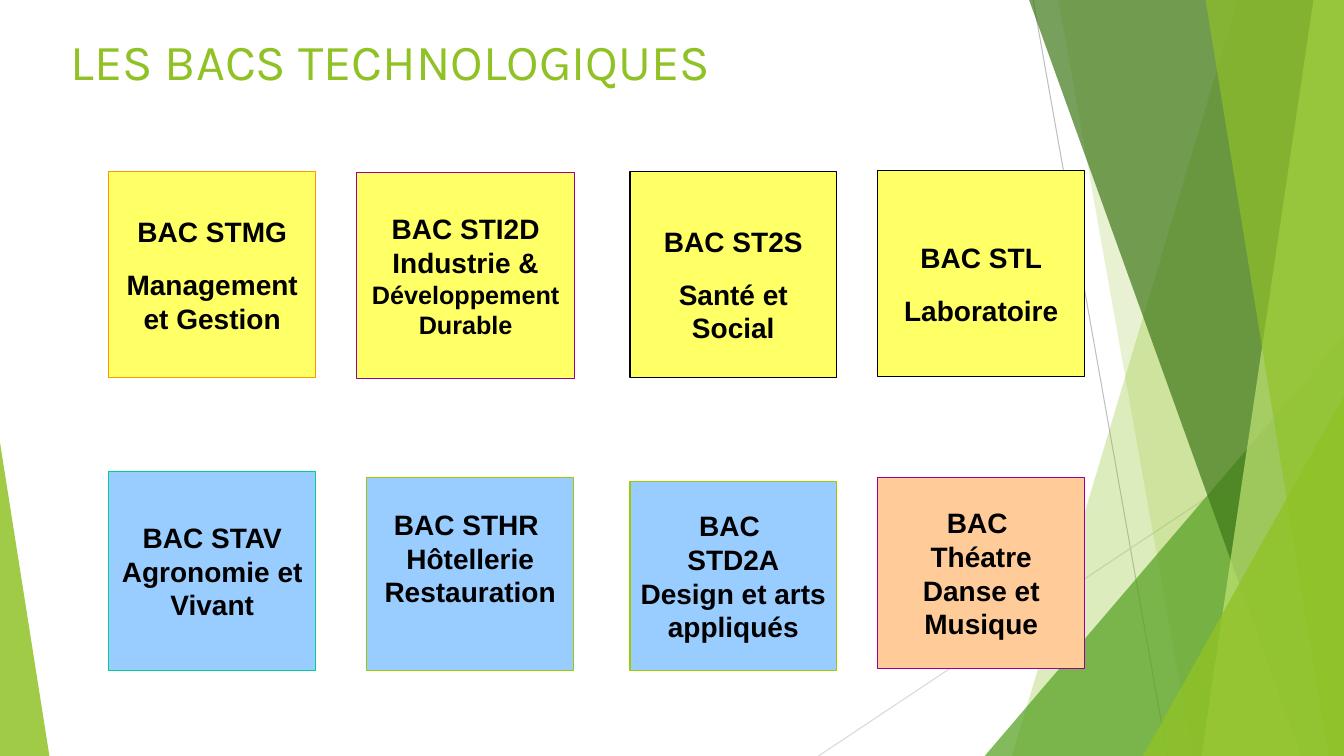
from dataclasses import dataclass

import pptx
import pptx.dml.color
import pptx.enum.shapes
import pptx.enum.text
import pptx.oxml
import pptx.oxml.ns
import pptx.util
from pptx.util import Pt

SHAPES = pptx.enum.shapes.MSO_SHAPE
ALIGN = pptx.enum.text.PP_ALIGN
ANCHOR = pptx.enum.text.MSO_ANCHOR


@dataclass(frozen=True)
class Theme:
    green: str = "90C226"
    mid_green: str = "54A021"
    dark_green: str = "3F7819"
    pale_green: str = "C0E474"
    black: str = "000000"
    yellow: str = "FFFF66"
    blue: str = "99CCFF"
    peach: str = "FFCC99"
    orange: str = "FF9900"
    purple: str = "990099"
    lime: str = "99CC00"
    teal: str = "00CC99"
    gray: str = "BFBFBF"
    light_gray: str = "D9D9D9"
    title_font: str = "Karla"
    body_font: str = "Arial"
    title_size: int = 36
    card_size: int = 20
    small_size: int = 18
    line_width: float = 0.75
    gap: float = 13.8


THEME = Theme()
CARD = 147.6

# left, top, width, height, fill, outline, paragraphs, space after the name,
# extra inset above, extra inset below
CARDS = [
    (77.8, 122.4, CARD, CARD, THEME.yellow, THEME.orange,
     ["BAC STMG", "Management et Gestion"], THEME.gap, 0, 0),
    (254.9, 123.1, 155.5, CARD, THEME.yellow, THEME.purple,
     ["BAC STI2D", ("Industrie & ", "Développement Durable")], 0, 0, 0),
    (450, 122.4, CARD, CARD, THEME.yellow, THEME.black,
     ["BAC ST2S", "Santé et Social"], THEME.gap, THEME.gap, 0),
    (627.1, 121.7, CARD, CARD, THEME.yellow, THEME.black,
     ["BAC STL", "Laboratoire"], THEME.gap, THEME.gap, 0),
    (77.8, 337, CARD, 141.8, THEME.blue, THEME.teal,
     ["BAC STAV", "Agronomie et Vivant"], 0, 0, 0),
    (262.1, 341.3, CARD, 137.5, THEME.blue, THEME.lime,
     ["BAC STHR ", "Hôtellerie", "Restauration"], 0, 0, 23),
    (450, 344.2, CARD, 134.6, THEME.blue, THEME.lime,
     ["BAC ", "STD2A", "Design et arts appliqués"], 0, 0, 0),
    (627.1, 341.3, CARD, 136.1, THEME.peach, THEME.purple,
     ["BAC ", "Théatre Danse et Musique"], 0, 0, 0),
]


def rgb(color):
    return pptx.dml.color.RGBColor.from_string(color)


def apply(target, formats):
    for name, value in formats.items():
        setattr(target, name, value)


def format_font(font, name, size, color, bold=False):
    apply(font, {"name": name, "size": Pt(size), "bold": bold})
    font.color.rgb = rgb(color)


def fill_shape(shape, color, opacity=100):
    """Give a flat fill; opacity is in percent."""
    shape.shadow.inherit = False
    shape.fill.solid()
    shape.fill.fore_color.rgb = rgb(color)
    if opacity < 100:
        color_element = shape._element.spPr.find(".//" + pptx.oxml.ns.qn("a:srgbClr"))
        alpha = pptx.oxml.ns.qn("a:alpha")
        color_element.makeelement(alpha, {})
        color_element.append(color_element.makeelement(alpha, {"val": str(opacity * 1000)}))


def add_decoration(slide, box):
    """Layer translucent facets along the right edge and one at the lower left."""
    left, top, width, height = box
    right, bottom = left + width, top + height

    def add_line(start, end, color):
        """Points are distances from the right edge and from the top."""
        line = slide.shapes.add_connector(
            pptx.enum.shapes.MSO_CONNECTOR.STRAIGHT,
            Pt(right - start[0]), Pt(top + start[1]), Pt(right - end[0]), Pt(top + end[1]))
        line.line.color.rgb = rgb(color)
        line.line.width = Pt(THEME.line_width)
        properties = line._element.spPr
        properties.append(properties.makeelement(pptx.oxml.ns.qn("a:effectLst"), {}))

    def add_facet(top_reach, bottom_reach, color, opacity):
        """Fill from the right edge out to a slanted side."""
        builder = slide.shapes.build_freeform(
            Pt(right - top_reach), Pt(top), scale=1.0)
        builder.add_line_segments([
            (Pt(right), Pt(top)), (Pt(right), Pt(bottom)),
            (Pt(right - bottom_reach), Pt(bottom))], close=True)
        facet = builder.convert_to_shape()
        fill_shape(facet, color, opacity)
        facet.line.fill.background()

    def add_corner(corner_left, corner_width, corner_height, apex, color, opacity):
        corner = slide.shapes.add_shape(
            SHAPES.ISOSCELES_TRIANGLE, Pt(corner_left), Pt(bottom - corner_height),
            Pt(corner_width), Pt(corner_height))
        corner.adjustments[0] = apex
        fill_shape(corner, color, opacity)
        corner.line.fill.background()

    add_line((222, 0), (126.2, height), THEME.gray)
    add_line((0, 290.2), (375.4, height), THEME.light_gray)
    add_facet(75.8, 237.1, THEME.green, 30)
    add_facet(204, 108.2, THEME.green, 20)
    add_corner(right - 256.6, 256.6, 300.2, 1, THEME.mid_green, 72)
    add_facet(224.9, 30.5, THEME.dark_green, 70)
    add_facet(21.8, 101.8, THEME.pale_green, 70)
    add_facet(98.9, 11, THEME.green, 65)
    add_corner(right - 143.5, 143.5, 257, 1, THEME.green, 80)
    add_corner(left, 35.3, 223.9, 0, THEME.green, 85)


def add_title(slide, box, text):
    title = slide.shapes.title
    apply(title, dict(zip(("left", "top", "width", "height"), map(Pt, box))))
    apply(title.text_frame, {
        "text": text, "word_wrap": True, "vertical_anchor": ANCHOR.TOP,
        "auto_size": pptx.enum.text.MSO_AUTO_SIZE.NONE})
    paragraph = title.text_frame.paragraphs[0]
    paragraph.alignment = ALIGN.LEFT
    format_font(paragraph.runs[0].font, THEME.title_font, THEME.title_size, THEME.green)


def add_card(slide, box, fill, outline, texts, name_gap, inset_above, inset_below):
    """Draw one course; a tuple of texts puts its second part in the small size."""
    card = slide.shapes.add_shape(SHAPES.RECTANGLE, *map(Pt, box))
    fill_shape(card, fill)
    card.line.color.rgb = rgb(outline)
    card.line.width = Pt(THEME.line_width)
    frame = card.text_frame
    apply(frame, {
        "word_wrap": True, "vertical_anchor": ANCHOR.MIDDLE,
        "margin_left": Pt(7.2), "margin_right": Pt(7.2),
        "margin_top": Pt(3.6 + inset_above), "margin_bottom": Pt(3.6 + inset_below)})
    for index, text in enumerate(texts):
        paragraph = frame.add_paragraph() if index else frame.paragraphs[0]
        apply(paragraph, {"alignment": ALIGN.CENTER,
                          "space_after": Pt(0 if index else name_gap)})
        parts = text if isinstance(text, tuple) else (text,)
        for part, size in zip(parts, (THEME.card_size, THEME.small_size)):
            run = paragraph.add_run()
            run.text = part
            format_font(run.font, THEME.body_font, size, THEME.black, bold=True)


def main():
    presentation = pptx.Presentation()
    apply(presentation, {"slide_width": Pt(960), "slide_height": Pt(540)})
    slide = presentation.slides.add_slide(presentation.slide_layouts[5])
    add_decoration(slide, (0, 0, 960, 540))
    add_title(slide, (43.2, 18, 596.2, 51.1), "LES BACS TECHNOLOGIQUES")
    for left, top, width, height, *content in CARDS:
        add_card(slide, (left, top, width, height), *content)
    presentation.save("out.pptx")


if __name__ == "__main__":
    main()
